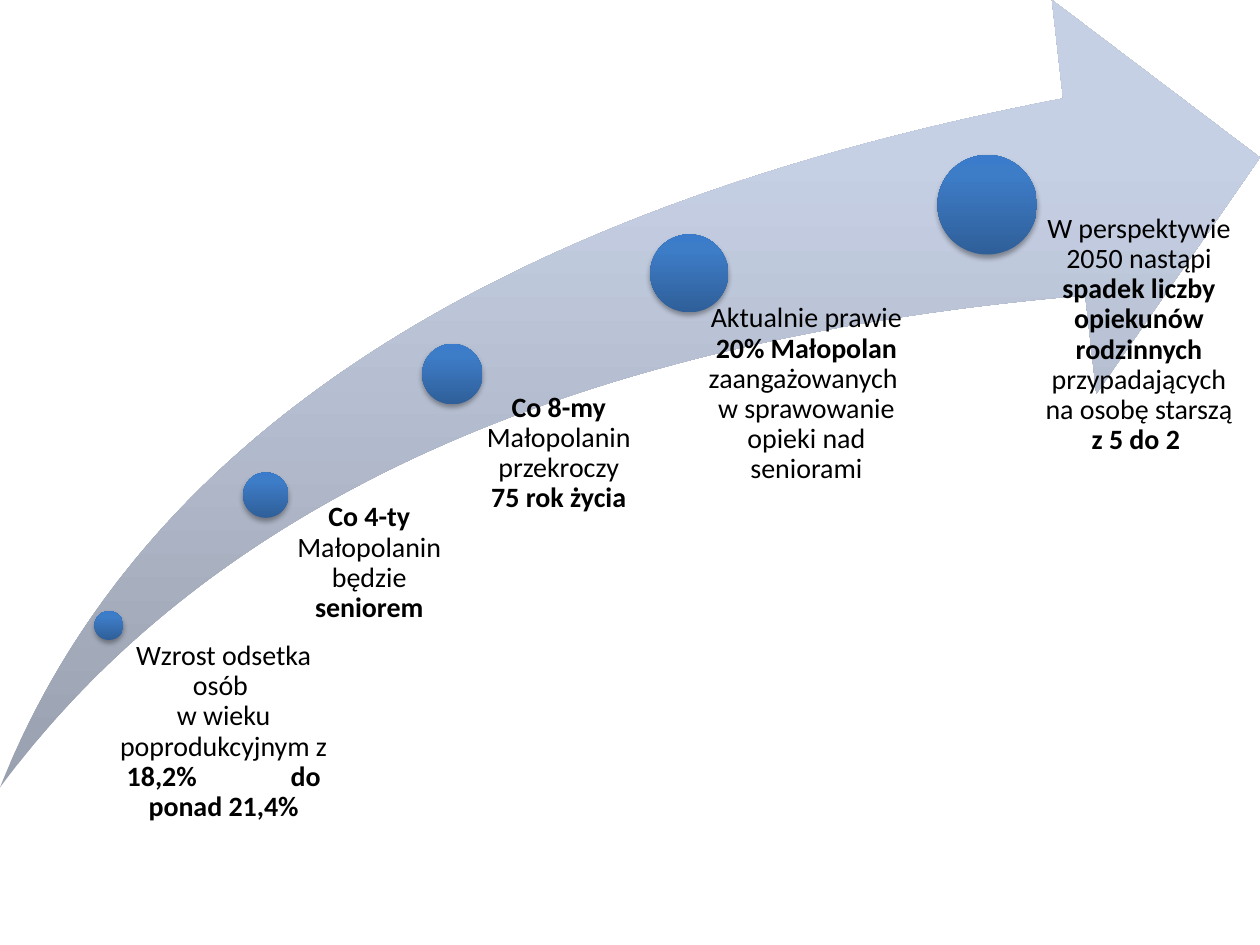
from copy import deepcopy

from lxml import etree
from pptx import Presentation
from pptx import util as u
from pptx.dml.color import RGBColor
from pptx.enum import shapes, text
from pptx.oxml.ns import qn

SWOOSH_STOPS = ((0, "99A0AF"), (0.8, "C6D0E4"), (1, "C7D1E5"))
DOT_STOPS = ((0, "2F5F99"), (0.8, "3D7CC7"), (1, "3A7CCB"))

# Dot (left, top, diameter), label box, left inset, runs of (text, bold)
MILESTONES = (
    ((0.75, 4.85, 0.23), (0.83, 5.09, 1.77, 1.84), 0.12,
     (("Wzrost odsetka osób \nw wieku poprodukcyjnym z ", False),
      ("18,2%\tdo ponad 21,4%", True))),
    ((1.93, 3.75, 0.36), (2.09, 3.99, 1.49, 1.16), 0.19,
     (("Co 4-ty ", True), ("Małopolanin będzie ", False), ("seniorem", True))),
    ((3.35, 2.73, 0.48), (3.58, 3.12, 1.46, 1.05), 0.25,
     (("Co 8-my ", True), ("Małopolanin przekroczy ", False),
      ("75 rok życia", True))),
    ((5.16, 1.86, 0.62), (5.16, 2.41, 2.15, 1.75), 0.33,
     (("Aktualnie prawie ", False), ("20% Małopolan ", True),
      ("zaangażowanych \nw sprawowanie opieki nad seniorami", False))),
    ((7.44, 1.23, 0.79), (7.83, 1.7, 2, 2.04), 0.42,
     (("W perspektywie 2050 nastąpi ", False),
      ("spadek liczby opiekunów rodzinnych ", True),
      ("przypadających na osobę starszą ", False), ("z 5 do 2 ", True))),
)


def color(value):
    return RGBColor.from_string(value)


def fill_upwards(shape, stops):
    """Fill with a three-stop gradient that runs from bottom to top."""
    shape.fill.gradient()
    shape.fill.gradient_angle = 90
    stop_list = next(shape.element.iter(qn("a:gsLst")))
    stop_list.append(deepcopy(stop_list[0]))
    for stop, (position, value) in zip(shape.fill.gradient_stops, stops):
        stop.position = position
        stop.color.rgb = color(value)


def add_gradient_shape(slide, kind, box, stops):
    shape = slide.shapes.add_shape(kind, *map(u.Inches, box))
    shape.shadow.inherit = False
    shape.line.fill.background()
    fill_upwards(shape, stops)
    return shape


def add_soft_shadow(shape):
    effects = shape.element.spPr.find(qn("a:effectLst"))
    shadow = etree.SubElement(
        effects, qn("a:outerShdw"), blurRad=str(u.Pt(3.1)), dist=str(u.Pt(1.8)),
        dir="5400000", rotWithShape="0")
    black = etree.SubElement(shadow, qn("a:srgbClr"), val="000000")
    etree.SubElement(black, qn("a:alpha"), val="35000")


def add_tab_stop(paragraph, position):
    properties = paragraph._p.get_or_add_pPr()
    tabs = etree.SubElement(properties, qn("a:tabLst"))
    etree.SubElement(tabs, qn("a:tab"), pos=str(u.Inches(position)), algn="l")


def add_text(slide, box, runs, inset=0, size=16, font="Calibri", ink="000000"):
    frame = slide.shapes.add_textbox(*map(u.Inches, box)).text_frame
    frame.word_wrap = True
    frame.margin_left = u.Inches(inset)
    frame.margin_top = frame.margin_right = frame.margin_bottom = 0
    paragraph = frame.paragraphs[0]
    paragraph.alignment = text.PP_ALIGN.CENTER
    paragraph.line_spacing = 0.9
    if any("\t" in words for words, _ in runs):
        add_tab_stop(paragraph, 1.3)
    for words, bold in runs:
        for index, line in enumerate(words.split("\n")):
            if index:
                paragraph.add_line_break()
            run = paragraph.add_run()
            run.text = line
            run.font.name = font
            run.font.size = u.Pt(size)
            run.font.bold = bold
            run.font.color.rgb = color(ink)


def add_swoosh(slide, box):
    swoosh = add_gradient_shape(
        slide, shapes.MSO_SHAPE.SWOOSH_ARROW, box, SWOOSH_STOPS)
    swoosh.adjustments[0] = swoosh.adjustments[1] = 0.25


def add_milestone(slide, dot_place, label_box, inset, runs):
    left, top, diameter = dot_place
    dot = add_gradient_shape(slide, shapes.MSO_SHAPE.OVAL,
                             (left, top, diameter, diameter), DOT_STOPS)
    add_soft_shadow(dot)
    add_text(slide, label_box, runs, inset=inset)


def main():
    presentation = Presentation()
    presentation.slide_width = u.Inches(10)
    presentation.slide_height = u.Inches(7.5)
    slide = presentation.slides.add_slide(presentation.slide_layouts[6])
    add_swoosh(slide, (0, 0, 10, 6.25))
    for milestone in MILESTONES:
        add_milestone(slide, *milestone)
    presentation.save("out.pptx")


if __name__ == "__main__":
    main()
